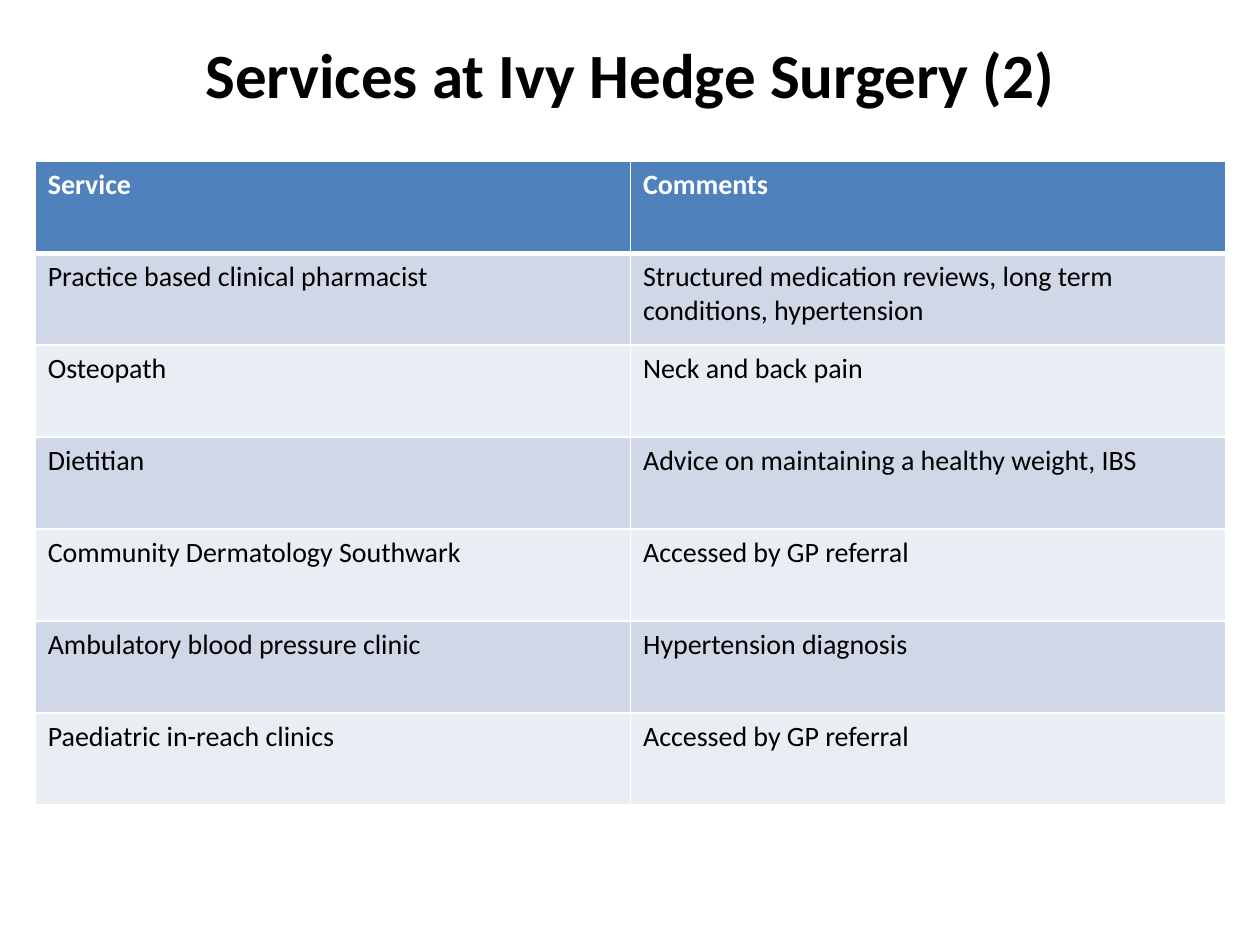
from lxml import etree
from pptx import Presentation
from pptx.dml.color import RGBColor
from pptx.enum.text import MSO_ANCHOR, PP_ALIGN
from pptx.oxml.ns import qn
from pptx.util import Inches, Pt

FONT = "Calibri"
WHITE, BLACK = "FFFFFF", "000000"
HEADER_FILL = "4F81BD"
BAND_FILLS = ("D0D8E8", "E9EDF4")

SERVICES = [
    ("Service", "Comments"),
    ("Practice based clinical pharmacist",
     "Structured medication reviews, long term conditions, hypertension"),
    ("Osteopath", "Neck and back pain"),
    ("Dietitian", "Advice on maintaining a healthy weight, IBS"),
    ("Community Dermatology Southwark", "Accessed by GP referral"),
    ("Ambulatory blood pressure clinic", "Hypertension diagnosis"),
    ("Paediatric in-reach clinics", "Accessed by GP referral"),
]


def color(value):
    return RGBColor.from_string(value)


def write(frame, words, ink, **formats):
    paragraph = frame.paragraphs[0]
    run = paragraph.add_run()
    run.text = words
    for name, value in {"name": FONT, **formats}.items():
        setattr(run.font, name, value)
    run.font.color.rgb = color(ink)
    return paragraph


def set_borders(cell, widths):
    """Draw white borders; widths maps each side, in L R T B order, to points."""
    properties = cell._tc.get_or_add_tcPr()
    for index, (side, width) in enumerate(widths.items()):
        line = etree.Element(qn(f"a:ln{side}"), w=str(Pt(width)))
        fill = etree.SubElement(line, qn("a:solidFill"))
        etree.SubElement(fill, qn("a:srgbClr"), val=WHITE)
        properties.insert(index, line)


def add_title(slide, left, top, width, height):
    title = slide.shapes.add_textbox(left, top, width, height)
    frame = title.text_frame
    frame.word_wrap = True
    frame.vertical_anchor = MSO_ANCHOR.MIDDLE
    heading = write(frame, "Services at Ivy Hedge Surgery (2)", BLACK,
                    size=Pt(36), bold=True)
    heading.alignment = PP_ALIGN.CENTER
    heading.line_spacing = 1.5


def add_services(slide, left, top, width, height):
    table = slide.shapes.add_table(
        len(SERVICES), len(SERVICES[0]), left, top, width, height).table
    for r, service in enumerate(SERVICES):
        header = r == 0
        widths = {"L": 1, "R": 1, "T": 3 if r == 1 else 1, "B": 3 if header else 1}
        for c, words in enumerate(service):
            cell = table.cell(r, c)
            cell.fill.solid()
            cell.fill.fore_color.rgb = color(
                HEADER_FILL if header else BAND_FILLS[(r - 1) % 2])
            write(cell.text_frame, words, WHITE if header else BLACK,
                  size=Pt(16), bold=header)
            set_borders(cell, widths)


def main():
    deck = Presentation()
    deck.slide_width, deck.slide_height = Inches(10), Inches(7.5)
    slide = deck.slides.add_slide(deck.slide_layouts[6])

    # Heading
    add_title(slide, Inches(0.5), Inches(-0.19), Inches(9), Inches(1.25))
    # Table of services
    add_services(slide, Inches(0.28), Inches(1.28), Inches(9.45), Inches(5.11))

    deck.save("out.pptx")


if __name__ == "__main__":
    main()
